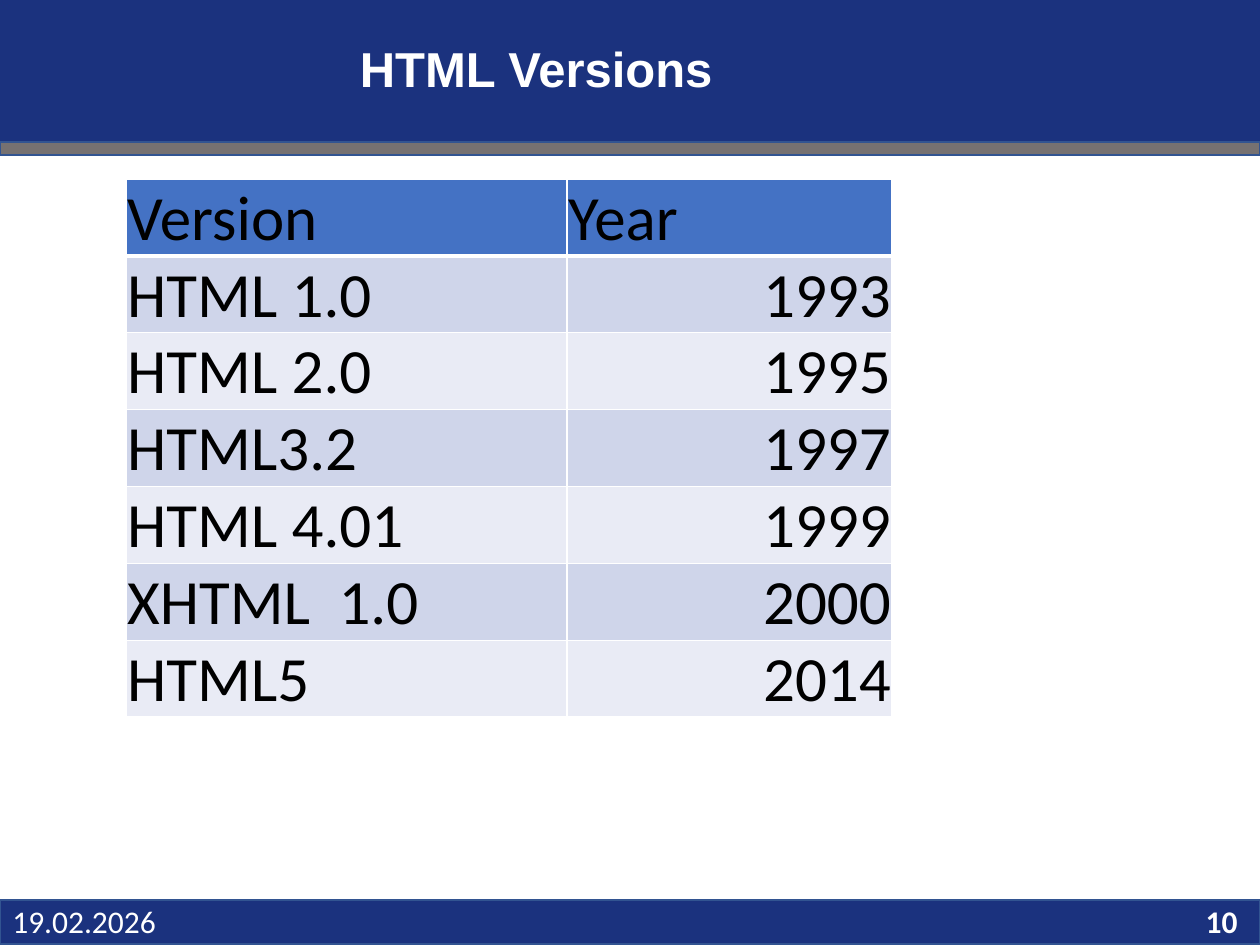
import pptx
import pptx.util
import pptx.dml.color
import pptx.enum.shapes
import pptx.enum.text
import pptx.oxml
import pptx.oxml.ns

Inches = pptx.util.Inches
Pt = pptx.util.Pt
ALIGN = pptx.enum.text.PP_ALIGN
ANCHOR = pptx.enum.text.MSO_ANCHOR

COLORS = {
    "navy": "1B327E",
    "outline": "325491",
    "gray": "767171",
    "white": "FFFFFF",
    "black": "000000",
    "header": "4472C4",
    "band_dark": "CFD5EA",
    "band_light": "E9EBF5",
}

VERSIONS = [
    ("Version", "Year"),
    ("HTML 1.0", "1993"),
    ("HTML 2.0", "1995"),
    ("HTML3.2", "1997"),
    ("HTML 4.01", "1999"),
    ("XHTML  1.0", "2000"),
    ("HTML5", "2014"),
]


def color(name):
    return pptx.dml.color.RGBColor.from_string(COLORS[name])


class SlideBuilder:
    """Holds the text style and the slide being filled."""

    def __init__(self, slide, font="Calibri", size=18):
        self.slide = slide
        self.font = font
        self.size = size

    def style(self, para, name, size=None, font=None, bold=False, align=ALIGN.LEFT):
        para.alignment = align
        for span in para.runs:
            span.font.name = font or self.font
            span.font.size = Pt(size or self.size)
            span.font.bold = bold
            span.font.color.rgb = color(name)

    def bar(self, top, height, fill, line=None):
        """Add a rectangle across the full slide width."""
        bar = self.slide.shapes.add_shape(
            pptx.enum.shapes.MSO_SHAPE.RECTANGLE,
            0, Inches(top), Inches(10), Inches(height))
        bar.shadow.inherit = False
        bar.fill.solid()
        bar.fill.fore_color.rgb = color(fill)
        if line:
            bar.line.color.rgb = color(line)
            bar.line.width = Pt(1)
        else:
            bar.line.fill.background()

    def text(self, text, left, top, width, height, spacing=None, **style):
        box = self.slide.shapes.add_textbox(
            Inches(left), Inches(top), Inches(width), Inches(height))
        frame = box.text_frame
        frame.word_wrap = True
        frame.vertical_anchor = ANCHOR.MIDDLE
        frame.text = text
        para = frame.paragraphs[0]
        para.line_spacing = spacing
        self.style(para, "white", **style)

    def borders(self, cell, bottom):
        """Draw white cell edges, the lower one as wide as bottom in points."""
        properties = cell._tc.get_or_add_tcPr()
        widths = {"lnL": 1, "lnR": 1, "lnT": 1, "lnB": bottom}
        for index, (edge, width) in enumerate(widths.items()):
            properties.insert(index, pptx.oxml.parse_xml(
                f'<a:{edge} {pptx.oxml.ns.nsdecls("a")} w="{Pt(width)}">'
                f'<a:solidFill><a:srgbClr val="{COLORS["white"]}"/></a:solidFill>'
                f'</a:{edge}>'))

    def table(self, rows, left, top, widths, row_height):
        table = self.slide.shapes.add_table(
            len(rows), len(widths), Inches(left), Inches(top),
            Inches(sum(widths)), Inches(row_height * len(rows))).table
        for column, width in zip(table.columns, widths):
            column.width = Inches(width)
        for row_index, values in enumerate(rows):
            table.rows[row_index].height = Inches(row_height)
            is_header = row_index == 0
            band = "band_dark" if row_index % 2 else "band_light"
            for column_index, value in enumerate(values):
                cell = table.cell(row_index, column_index)
                cell.text = value
                cell.vertical_anchor = ANCHOR.BOTTOM
                cell.margin_left = cell.margin_right = cell.margin_top = Inches(0.01)
                cell.margin_bottom = 0
                cell.fill.solid()
                cell.fill.fore_color.rgb = color("header" if is_header else band)
                self.borders(cell, bottom=3 if is_header else 1)
                is_year = column_index == 1 and not is_header
                self.style(cell.text_frame.paragraphs[0], "black", size=36,
                           align=ALIGN.RIGHT if is_year else ALIGN.LEFT)


def main():
    deck = pptx.Presentation()
    deck.slide_width = Inches(10)
    deck.slide_height = Inches(7.5)
    page = SlideBuilder(deck.slides.add_slide(deck.slide_layouts[6]))

    page.bar(7.14, 0.35, "navy", line="outline")
    page.bar(0, 1.13, "navy")
    page.bar(1.13, 0.1, "gray", line="outline")
    page.text("19.02.2026", 0, 7.11, 1.5, 0.4)
    page.text("10", 9.42, 7.11, 0.5, 0.4, bold=True, align=ALIGN.RIGHT)
    page.table(VERSIONS, 1, 1.42, widths=(3.5, 2.58), row_height=0.61)
    page.text("HTML Versions", 0.42, 0, 7.67, 1.13, spacing=0.9,
              size=28, font="Arial", bold=True, align=ALIGN.CENTER)

    deck.save("out.pptx")


if __name__ == "__main__":
    main()
